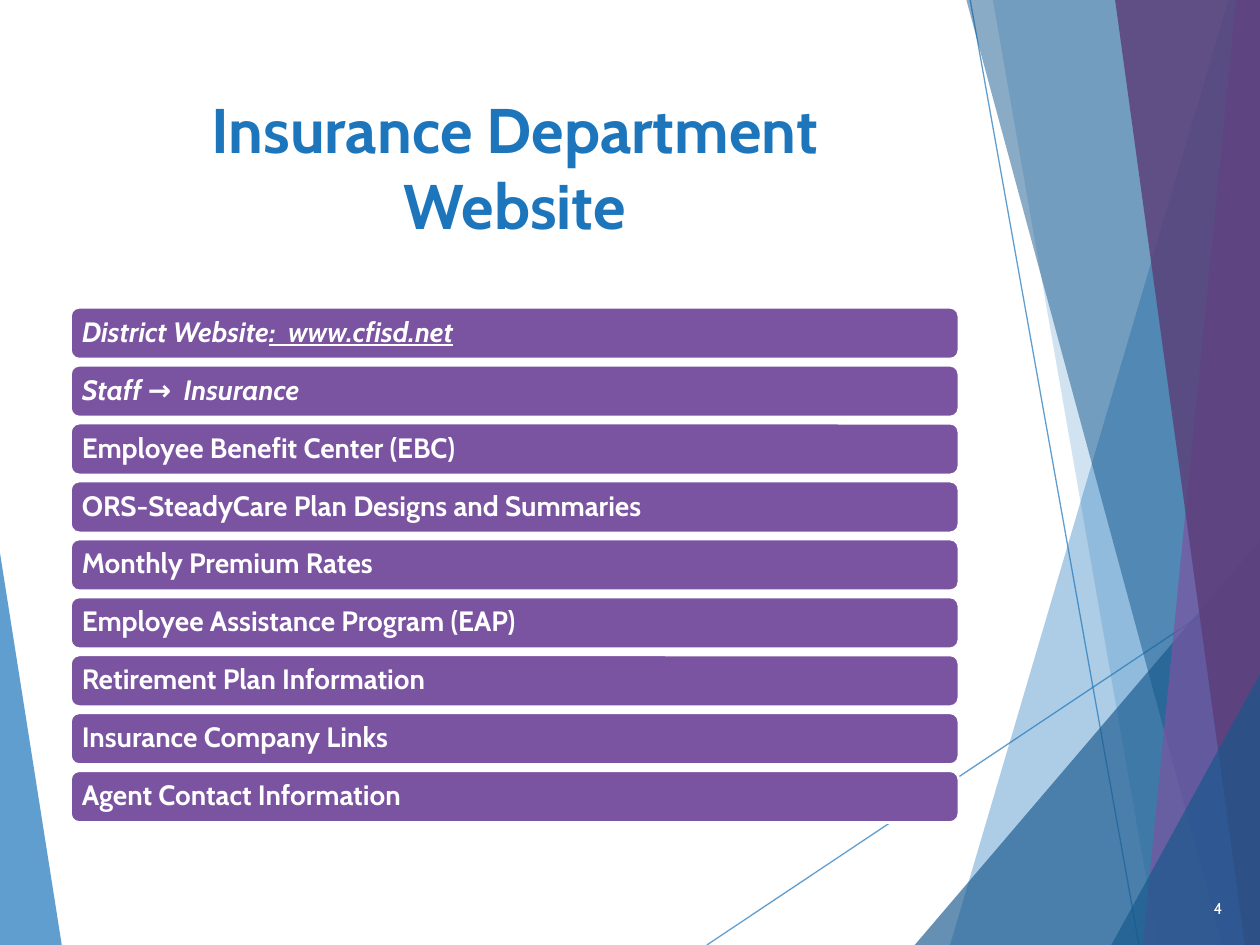
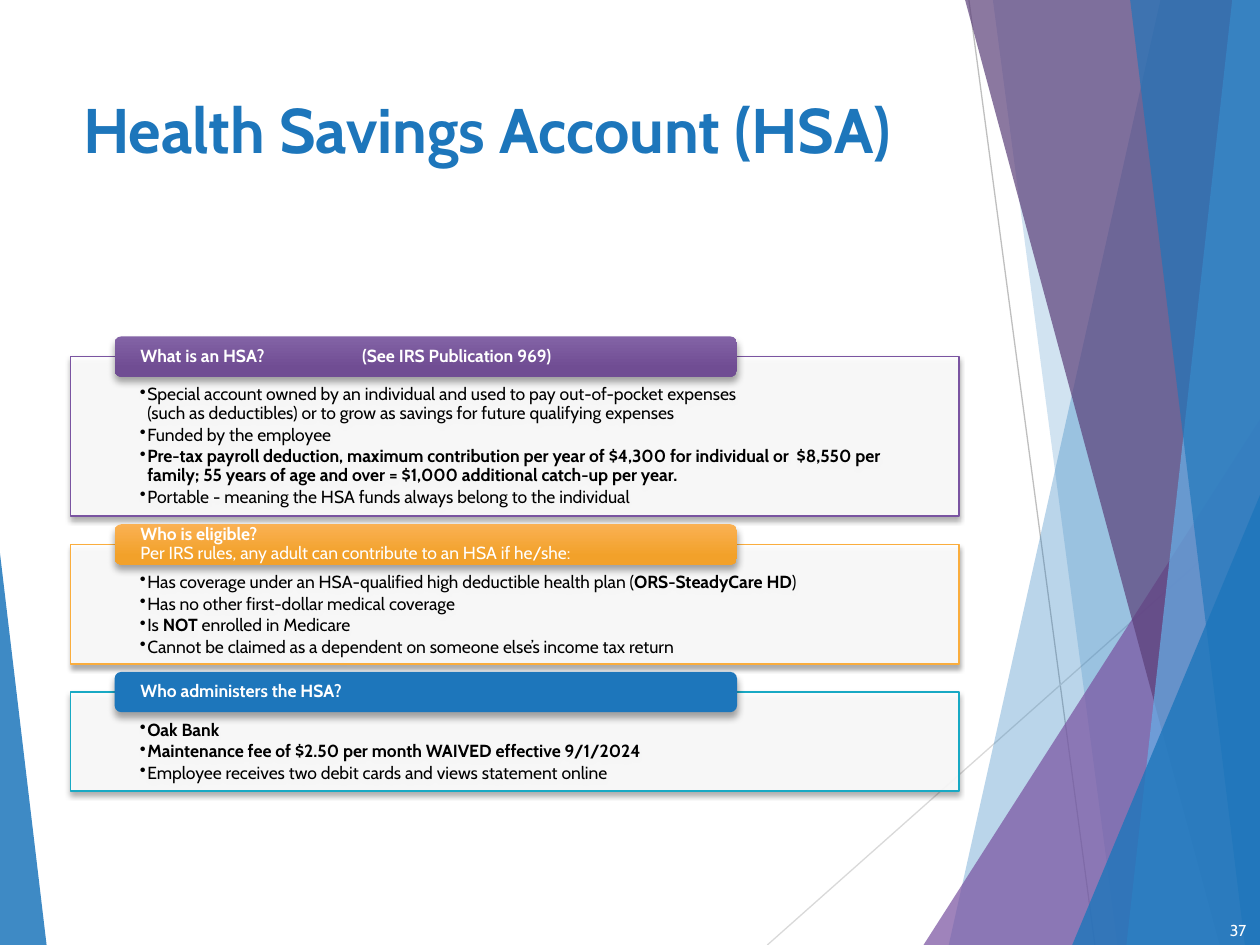
"""Build two benefit slides: the insurance website list and the HSA overview."""
import dataclasses

import lxml.etree
import pptx
import pptx.dml.color
import pptx.enum.shapes
import pptx.enum.text
import pptx.oxml.ns
import pptx.util

SHAPE = pptx.enum.shapes.MSO_SHAPE
ALIGN = pptx.enum.text.PP_ALIGN
ANCHOR = pptx.enum.text.MSO_ANCHOR
qn = pptx.oxml.ns.qn


@dataclasses.dataclass(frozen=True)
class Theme:
    font: str = "Cabin"
    blue: str = "1D76BB"
    navy: str = "16588C"
    sky: str = "66AFE7"
    purple: str = "7A54A1"
    plum: str = "5B3F79"
    orange: str = "FAAD3D"
    teal: str = "18A9C4"
    silver: str = "BFBFBF"
    mist: str = "D9D9D9"
    white: str = "FFFFFF"
    black: str = "000000"
    title_size: int = 36
    bar_size: int = 16
    panel_size: int = 10
    number_size: int = 9


THEME = Theme()
WIDTH, HEIGHT = pptx.util.Inches(10), pptx.util.Inches(7.5)

# Places below are percentages of the slide's width and height.
COLUMN_LEFT, COLUMN_WIDTH = 5.6, 70.5
TITLE_BOX = (COLUMN_LEFT, 8.93, COLUMN_WIDTH, 18.8)
BAR_TOP, BAR_PITCH, BAR_HEIGHT = 32.53, 6.13, 5.47
PANEL_TOP, PANEL_GAP, PANEL_BASE, PANEL_LINE = 37.73, 2.97, 4.13, 2.13
HEADER_LEFT, HEADER_WIDTH, HEADER_HEIGHT = 9.1, 49.4, 4.27

WEBSITE = {
    "title": "Insurance Department\vWebsite",
    "align": ALIGN.CENTER,
    "number": ("4", (92.4, 93.47, 5.6, 5.33), ANCHOR.MIDDLE),
    "backdrop": [
        (THEME.blue, 70, [(0, 58.53), (4.9, 100), (0, 100)]),
        (THEME.blue, 70, [(56.1, 100), (100, 60.93)]),
        (THEME.blue, 70, [(77, 0), (90.4, 100)]),
        (THEME.blue, 36, [(97.5, 0), (75.4, 100), (100, 100), (100, 0)]),
        (THEME.blue, 20, [(78.8, 0), (91.9, 100), (100, 100), (100, 0)]),
        (THEME.navy, 66, [(100, 57.2), (72.6, 100), (100, 100)]),
        (THEME.navy, 50, [(76.7, 0), (97, 100), (100, 100), (100, 0)]),
        (THEME.purple, 70, [(98.1, 0), (90.7, 100), (100, 100), (100, 0)]),
        (THEME.plum, 82, [(88.5, 0), (98.8, 100), (100, 100), (100, 0)]),
        (THEME.navy, 66, [(100, 71.33), (88.2, 100), (100, 100)]),
    ],
}
BARS = [
    [("District Website", "bi"), (":  www.cfisd.net", "biu")],
    [("Staff →  Insurance", "bi")],
    [("Employee Benefit Center (EBC)", "b")],
    [("ORS-SteadyCare Plan Designs and Summaries", "b")],
    [("Monthly Premium Rates", "b")],
    [("Employee Assistance Program (EAP)", "b")],
    [("Retirement Plan Information", "b")],
    [("Insurance Company Links", "b")],
    [("Agent Contact Information", "b")],
]

SAVINGS = {
    "title": "Health Savings Account (HSA)",
    "align": ALIGN.LEFT,
    "number": ("37", (76.6, 96.8, 23.3, 3.2), ANCHOR.TOP),
    "backdrop": [
        (THEME.silver, 100, [(76.9, 0), (86.9, 100)]),
        (THEME.mist, 100, [(100, 53.73), (60.9, 100)]),
        (THEME.blue, 30, [(92.1, 0), (100, 0), (100, 100), (75.3, 100)]),
        (THEME.blue, 20, [(78.8, 0), (100, 0), (100, 100), (88.7, 100)]),
        (THEME.purple, 72, [(100, 44.4), (73.3, 100), (100, 100)]),
        (THEME.plum, 70, [(76.6, 0), (100, 0), (100, 100), (96.8, 100)]),
        (THEME.sky, 70, [(97.8, 0), (100, 0), (100, 100), (89.4, 100)]),
        (THEME.blue, 65, [(89.7, 0), (100, 0), (100, 100), (98.8, 100)]),
        (THEME.blue, 80, [(100, 52.4), (85.1, 100), (100, 100)]),
        (THEME.blue, 85, [(0, 58.53), (3.7, 100), (0, 100)]),
    ],
}
PANELS = [
    {"header": [("What is an HSA?\t(See IRS Publication 969)", "b")],
     "outline": THEME.purple, "fill": ("8363A6", "704D93"), "lines": 6,
     "bullets": [
         [("Special account owned by an individual and used to pay out-of-pocket expenses\n"
           "(such as deductibles) or to grow as savings for future qualifying expenses", "")],
         [("Funded by the employee", "")],
         [("Pre-tax payroll deduction, maximum contribution per year of $4,300 for individual "
           "or  $8,550 per family; 55 years of age and over = $1,000 additional catch-up "
           "per year.", "b")],
         [("Portable - meaning the HSA funds always belong to the individual", "")]]},
    {"header": [("Who is eligible?\n", "b"),
                ("Per IRS rules, any adult can contribute to an HSA if he/she:", "")],
     "outline": THEME.orange, "fill": ("FAB153", "F2A12A"), "lines": 4,
     "bullets": [
         [("Has coverage under an HSA-qualified high deductible health plan (", ""),
          ("ORS-SteadyCare HD", "b"), (")", "")],
         [("Has no other first-dollar medical coverage", "")],
         [("Is ", ""), ("NOT ", "b"), ("enrolled in Medicare", "")],
         [("Cannot be claimed as a dependent on someone else’s income tax return", "")]]},
    {"header": [("Who administers the HSA?", "b")],
     "outline": THEME.teal, "fill": (THEME.blue,), "lines": 3,
     "bullets": [
         [("Oak Bank", "b")],
         [("Maintenance fee of $2.50 per month WAIVED effective 9/1/2024", "b")],
         [("Employee receives two debit cards and views statement online", "")]]},
]


def rgb(colour):
    return pptx.dml.color.RGBColor.from_string(colour)


def point(x, y):
    return round(WIDTH * x / 100), round(HEIGHT * y / 100)


def box(left, top, width, height):
    return point(left, top) + point(width, height)


def add_child(parent, tag, **attributes):
    return lxml.etree.SubElement(parent, qn(tag), attributes)


def set_opacity(shape, percent):
    if percent < 100:
        colour = next(shape.element.spPr.iter(qn("a:srgbClr")))
        add_child(colour, "a:alpha", val=str(percent * 1000))


def set_font(paragraph, size, colour):
    paragraph.font.name = THEME.font
    paragraph.font.size = pptx.util.Pt(size)
    paragraph.font.color.rgb = rgb(colour)


def write_runs(paragraph, runs, size, colour):
    paragraph.alignment = ALIGN.LEFT
    paragraph.line_spacing = 0.9
    set_font(paragraph, size, colour)
    for text, style in runs:
        for index, line in enumerate(text.split("\n")):
            if index:
                paragraph.add_line_break()
            if line:
                run = paragraph.add_run()
                run.text = line
                run.font.bold = "b" in style
                run.font.italic = "i" in style
                run.font.underline = "u" in style


def set_frame(frame, anchor, side, top=0.0, bottom=0.0):
    frame.word_wrap = True
    frame.vertical_anchor = anchor
    frame.margin_left = frame.margin_right = pptx.util.Inches(side)
    frame.margin_top, frame.margin_bottom = pptx.util.Inches(top), pptx.util.Inches(bottom)


def style_shape(shape, colours, opacity=100, outline=None, weight=1.0):
    shape.shadow.inherit = False
    if len(colours) == 1:
        shape.fill.solid()
        shape.fill.fore_color.rgb = rgb(colours[0])
        set_opacity(shape, opacity)
    else:
        shape.fill.gradient()
        shape.fill.gradient_angle = 270
        for stop, colour, position in zip(shape.fill.gradient_stops, colours, (0, 0.78)):
            stop.color.rgb, stop.position = rgb(colour), position
    if outline:
        shape.line.color.rgb = rgb(outline)
        shape.line.width = pptx.util.Pt(weight)
    else:
        shape.line.fill.background()


def add_shadow(shape, blur, distance):
    shadow = add_child(shape.element.spPr.find(qn("a:effectLst")), "a:outerShdw",
                       blurRad=str(pptx.util.Pt(blur)), dist=str(pptx.util.Pt(distance)),
                       dir="5400000", rotWithShape="0")
    add_child(add_child(shadow, "a:srgbClr", val=THEME.black), "a:alpha", val="35000")


def add_backdrop(slide, pieces):
    for colour, opacity, corners in pieces:
        points = [point(*corner) for corner in corners]
        if len(points) == 2:
            line = slide.shapes.add_connector(
                pptx.enum.shapes.MSO_CONNECTOR.STRAIGHT, *points[0], *points[1])
            line.line.color.rgb = rgb(colour)
            line.line.width = pptx.util.Pt(0.75)
            set_opacity(line, opacity)
            add_child(line.element.spPr, "a:effectLst")
            continue
        if len(points) == 3:
            (apex, top), *base = points
            left, right = sorted(x for x, y in base)
            shape = slide.shapes.add_shape(
                SHAPE.ISOSCELES_TRIANGLE, left, top, right - left, HEIGHT - top)
            shape.adjustments[0] = (apex - left) / (right - left)
        else:
            builder = slide.shapes.build_freeform(*points[0])
            builder.add_line_segments(points[1:], close=True)
            shape = builder.convert_to_shape()
        style_shape(shape, [colour], opacity)


def add_slide(presentation, content):
    slide = presentation.slides.add_slide(presentation.slide_layouts.get_by_name("Title Only"))
    add_backdrop(slide, content["backdrop"])
    title = slide.shapes.title
    title.left, title.top, title.width, title.height = box(*TITLE_BOX)
    title.text_frame.text = content["title"]
    title.text_frame.auto_size = pptx.enum.text.MSO_AUTO_SIZE.NONE
    set_frame(title.text_frame, ANCHOR.TOP, 0.1, 0.05, 0.05)
    paragraph = title.text_frame.paragraphs[0]
    paragraph.alignment = content["align"]
    set_font(paragraph, THEME.title_size, THEME.blue)
    paragraph.font.bold = True

    text, place, anchor = content["number"]
    frame = slide.shapes.add_textbox(*box(*place)).text_frame
    set_frame(frame, anchor, 0.1, 0.05, 0.05)
    frame.text = text
    frame.paragraphs[0].alignment = ALIGN.RIGHT
    set_font(frame.paragraphs[0], THEME.number_size, THEME.white)
    return slide


def add_bars(slide):
    for row, runs in enumerate(BARS):
        bar = slide.shapes.add_shape(SHAPE.ROUNDED_RECTANGLE, *box(
            COLUMN_LEFT, BAR_TOP + row * BAR_PITCH, COLUMN_WIDTH, BAR_HEIGHT))
        style_shape(bar, [THEME.purple], outline=THEME.white, weight=1.5)
        set_frame(bar.text_frame, ANCHOR.MIDDLE, 0.07)
        write_runs(bar.text_frame.paragraphs[0], runs, THEME.bar_size, THEME.white)


def add_panels(slide):
    top = PANEL_TOP
    for content in PANELS:
        height = PANEL_BASE + PANEL_LINE * content["lines"]
        panel = slide.shapes.add_shape(
            SHAPE.RECTANGLE, *box(COLUMN_LEFT, top, COLUMN_WIDTH, height))
        style_shape(panel, [THEME.white], 90, content["outline"])
        add_shadow(panel, 3, 2)
        frame = panel.text_frame
        set_frame(frame, ANCHOR.TOP, 0.55, 0.23, 0.08)
        for index, runs in enumerate(content["bullets"]):
            paragraph = frame.add_paragraph() if index else frame.paragraphs[0]
            properties = paragraph._p.get_or_add_pPr()
            indent = pptx.util.Inches(0.06)
            properties.set("marL", str(indent))
            properties.set("indent", str(-indent))
            add_child(properties, "a:buChar", char="•")
            paragraph.space_after = pptx.util.Pt(1.5)
            write_runs(paragraph, runs, THEME.panel_size, THEME.black)

        header = slide.shapes.add_shape(SHAPE.ROUNDED_RECTANGLE, *box(
            HEADER_LEFT, top - HEADER_HEIGHT / 2, HEADER_WIDTH, HEADER_HEIGHT))
        style_shape(header, content["fill"])
        add_shadow(header, 4, 3)
        set_frame(header.text_frame, ANCHOR.MIDDLE, 0.19)
        paragraph = header.text_frame.paragraphs[0]
        if "\t" in content["header"][0][0]:
            tabs = add_child(paragraph._p.get_or_add_pPr(), "a:tabLst")
            add_child(tabs, "a:tab", pos=str(pptx.util.Inches(1.76)), algn="l")
        write_runs(paragraph, content["header"], THEME.panel_size, THEME.white)
        top += height + PANEL_GAP


def main():
    presentation = pptx.Presentation()
    presentation.slide_width, presentation.slide_height = WIDTH, HEIGHT
    add_bars(add_slide(presentation, WEBSITE))
    add_panels(add_slide(presentation, SAVINGS))
    presentation.save("out.pptx")


if __name__ == "__main__":
    main()
